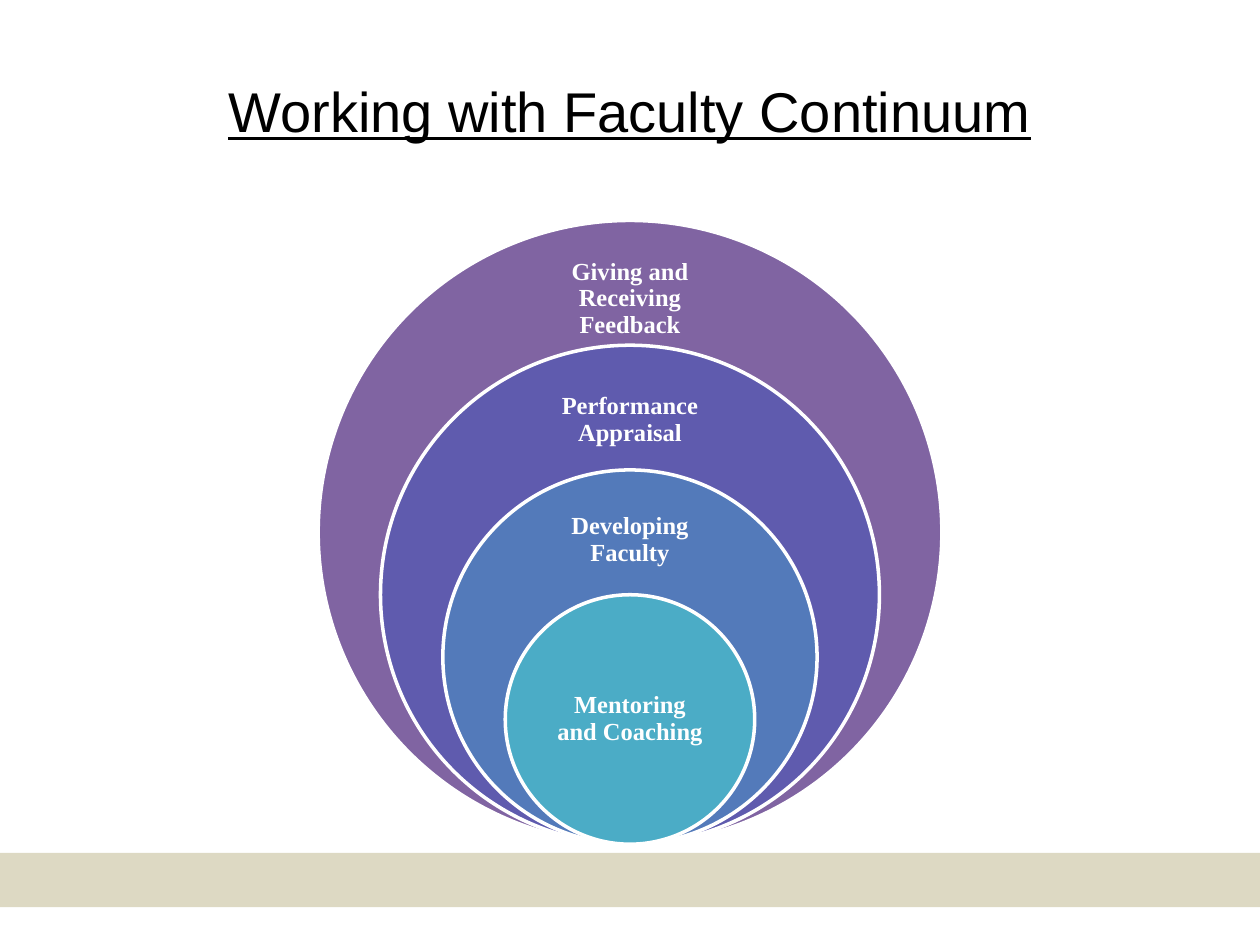
from dataclasses import dataclass

from pptx import Presentation
from pptx import util as u
from pptx.dml.color import RGBColor
from pptx.enum import shapes, text


@dataclass(frozen=True)
class Theme:
    title_font: str = "Arial"
    label_font: str = "Times New Roman"
    title_size: int = 32
    label_size: int = 14
    ink: str = "000000"
    paper: str = "FFFFFF"
    band: str = "DDD9C3"
    rings: tuple = ("8064A2", "5F5BAE", "537ABA", "4BACC6")


class Deck:
    def __init__(self, theme):
        self.theme = theme
        self.prs = Presentation()
        self.prs.slide_width = u.Inches(10)
        self.prs.slide_height = u.Inches(7.5)
        self.s = self.prs.slides.add_slide(self.prs.slide_layouts[6])

    def shape(self, kind, box, fill, line=None):
        sp = self.s.shapes.add_shape(kind, *map(u.Inches, box))
        sp.shadow.inherit = False
        sp.fill.solid()
        sp.fill.fore_color.rgb = RGBColor.from_string(fill)
        if line:
            sp.line.color.rgb = RGBColor.from_string(line)
            sp.line.width = u.Pt(2)
        else:
            sp.line.fill.background()

    def textbox(self, box, words, font, size, color, inset=0.1,
                spacing=1.0, bold=False, underline=False):
        tf = self.s.shapes.add_textbox(*map(u.Inches, box)).text_frame
        tf.word_wrap = True
        tf.vertical_anchor = text.MSO_ANCHOR.MIDDLE
        tf.margin_left = tf.margin_right = u.Inches(inset)
        tf.margin_top = tf.margin_bottom = u.Inches(inset)
        p = tf.paragraphs[0]
        p.alignment = text.PP_ALIGN.CENTER
        p.line_spacing = spacing
        r = p.add_run()
        r.text = words
        r.font.name = font
        r.font.size = u.Pt(size)
        r.font.bold = bold
        r.font.underline = underline
        r.font.color.rgb = RGBColor.from_string(color)

    def title(self, words):
        t = self.theme
        self.textbox((0.5, 0.3, 9, 1.14), words, t.title_font, t.title_size,
                     t.ink, underline=True)

    def band(self):
        self.shape(shapes.MSO_SHAPE.RECTANGLE, (0, 6.77, 10, 0.43), self.theme.band)

    def ring(self, diameter, bottom, fill):
        box = (5 - diameter / 2, bottom - diameter, diameter, diameter)
        self.shape(shapes.MSO_SHAPE.OVAL, box, fill, self.theme.paper)

    def label(self, words, top, width, height):
        t = self.theme
        self.textbox((5 - width / 2, top, width, height), words, t.label_font,
                     t.label_size, t.paper, inset=0.11, spacing=0.9, bold=True)


def main():
    theme = Theme()
    deck = Deck(theme)
    deck.band()
    deck.title("Working with Faculty Continuum")
    labels = [
        ("Giving and Receiving Feedback", 2, 1.38, 0.74),
        ("Performance Appraisal", 2.98, 1.38, 0.71),
        ("Developing Faculty", 3.95, 1.38, 0.67),
        ("Mentoring and Coaching", 5.21, 1.4, 0.99),
    ]
    outer, step, bottom = 4.95, 0.99, 6.7
    for i, (fill, label) in enumerate(zip(theme.rings, labels)):
        deck.ring(outer - i * step, bottom, fill)
        deck.label(*label)
    deck.prs.save("out.pptx")


if __name__ == "__main__":
    main()
